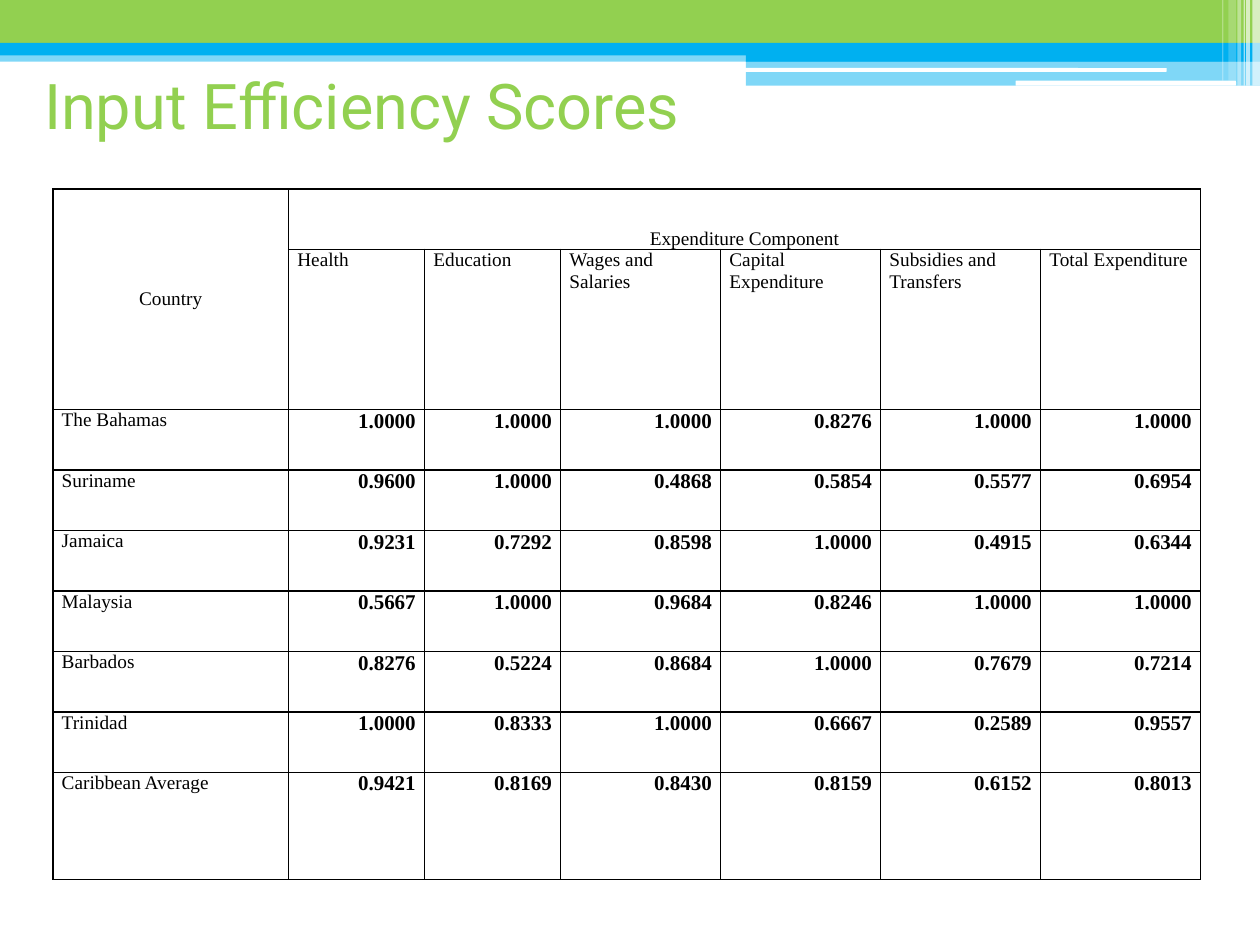
from typing import NamedTuple

from lxml.etree import SubElement
from pptx import Presentation
from pptx.dml.color import RGBColor
from pptx.enum.shapes import MSO_SHAPE
from pptx.enum.text import MSO_ANCHOR, PP_ALIGN
from pptx.oxml.ns import qn
from pptx.util import Inches, Pt

COLORS = {"green": "92D050", "blue": "00B0F0", "white": "FFFFFF", "black": "000000"}


class Bar(NamedTuple):
    left: float
    top: float
    width: float
    height: float
    color: str
    opacity: int = 100
    rounded: bool = False


class Score(NamedTuple):
    country: str
    values: tuple[str, ...]


BARS = [
    Bar(0, 0.4, 10, 0.09, "blue", 50),
    Bar(0, 0, 10, 0.34, "green"),
    Bar(0, 0.34, 10, 0.1, "blue"),
    Bar(5.92, 0.39, 4.08, 0.1, "blue"),
    Bar(5.92, 0.48, 4.08, 0.2, "blue", 50),
    Bar(5.91, 0.54, 3.35, 0.03, "white", rounded=True),
    Bar(8.06, 0.64, 1.75, 0.04, "white", rounded=True),
    Bar(9.94, 0, 0.06, 0.68, "white", 65),
    Bar(9.89, 0, 0.03, 0.68, "white", 65),
    Bar(9.87, 0, 0.01, 0.68, "white", 60),
    Bar(9.82, 0, 0.03, 0.68, "white", 40),
    Bar(9.75, 0, 0.06, 0.64, "white", 20),
    Bar(9.7, 0, 0.01, 0.64, "white", 30),
]
COMPONENTS = ["Health", "Education", "Wages and Salaries", "Capital\nExpenditure",
              "Subsidies and Transfers", "Total Expenditure"]
SCORES = [
    Score("The Bahamas", ("1.0000", "1.0000", "1.0000", "0.8276", "1.0000", "1.0000")),
    Score("Suriname", ("0.9600", "1.0000", "0.4868", "0.5854", "0.5577", "0.6954")),
    Score("Jamaica", ("0.9231", "0.7292", "0.8598", "1.0000", "0.4915", "0.6344")),
    Score("Malaysia", ("0.5667", "1.0000", "0.9684", "0.8246", "1.0000", "1.0000")),
    Score("Barbados", ("0.8276", "0.5224", "0.8684", "1.0000", "0.7679", "0.7214")),
    Score("Trinidad", ("1.0000", "0.8333", "1.0000", "0.6667", "0.2589", "0.9557")),
    Score("Caribbean Average", ("0.9421", "0.8169", "0.8430", "0.8159", "0.6152", "0.8013")),
]
COLUMN_WIDTHS = [1.87] + [1.08] * 2 + [1.27] * 4
ROW_HEIGHTS = [0.48, 1.27] + [0.48] * 6 + [0.85]


def write_text(frame, text: str, *, size: float = 11, font: str = "Times New Roman",
               color: str = "black", bold: bool = False, align=PP_ALIGN.LEFT) -> None:
    frame.text = text
    for paragraph in frame.paragraphs:
        paragraph.alignment = align
        for run in paragraph.runs:
            run.font.size = Pt(size)
            run.font.name = font
            run.font.bold = bold
            run.font.color.rgb = RGBColor.from_string(COLORS[color])


def draw_bar(slide, bar: Bar) -> None:
    kind = MSO_SHAPE.ROUNDED_RECTANGLE if bar.rounded else MSO_SHAPE.RECTANGLE
    shape = slide.shapes.add_shape(kind, Inches(bar.left), Inches(bar.top),
                                   Inches(bar.width), Inches(bar.height))
    shape.shadow.inherit = False
    shape.line.fill.background()
    shape.fill.solid()
    shape.fill.fore_color.rgb = RGBColor.from_string(COLORS[bar.color])
    if bar.opacity < 100:
        color = shape.fill._xPr.find(".//" + qn("a:srgbClr"))
        SubElement(color, qn("a:alpha")).set("val", str(bar.opacity * 1000))


def format_cell(cell) -> None:
    cell.margin_left = cell.margin_right = Inches(0.07)
    cell.margin_top = cell.margin_bottom = 0
    properties = cell._tc.get_or_add_tcPr()
    for side in ("lnL", "lnR", "lnT", "lnB"):
        line = SubElement(properties, qn(f"a:{side}"), w=str(Pt(1)))
        fill = SubElement(line, qn("a:solidFill"))
        SubElement(fill, qn("a:srgbClr"), val=COLORS["black"])
    cell.fill.background()


def draw_table(slide) -> None:
    table = slide.shapes.add_table(
        len(ROW_HEIGHTS), len(COLUMN_WIDTHS), Inches(0.42), Inches(1.5),
        Inches(sum(COLUMN_WIDTHS)), Inches(sum(ROW_HEIGHTS))).table
    table.first_row = table.horz_banding = False
    for column, width in zip(table.columns, COLUMN_WIDTHS):
        column.width = Inches(width)
    for row, height in zip(table.rows, ROW_HEIGHTS):
        row.height = Inches(height)
    for cell in table.iter_cells():
        format_cell(cell)

    country, component = table.cell(0, 0), table.cell(0, 1)
    country.merge(table.cell(1, 0))
    component.merge(table.cell(0, len(COMPONENTS)))
    country.vertical_anchor = MSO_ANCHOR.MIDDLE
    component.vertical_anchor = MSO_ANCHOR.BOTTOM
    write_text(country.text_frame, "Country", align=PP_ALIGN.CENTER)
    write_text(component.text_frame, "Expenditure Component", align=PP_ALIGN.CENTER)
    for column, name in enumerate(COMPONENTS, start=1):
        write_text(table.cell(1, column).text_frame, name)
    for row, score in enumerate(SCORES, start=2):
        write_text(table.cell(row, 0).text_frame, score.country)
        for column, value in enumerate(score.values, start=1):
            write_text(table.cell(row, column).text_frame, value,
                       size=12, bold=True, align=PP_ALIGN.RIGHT)


def main() -> None:
    presentation = Presentation()
    presentation.slide_width = Inches(10)
    presentation.slide_height = Inches(7.5)
    slide = presentation.slides.add_slide(presentation.slide_layouts[5])
    for bar in BARS:
        draw_bar(slide, bar)
    title = slide.shapes.title
    title.left, title.top = Inches(0.25), Inches(0.58)
    title.width, title.height = Inches(9), Inches(0.5)
    title.text_frame.vertical_anchor = MSO_ANCHOR.MIDDLE
    write_text(title.text_frame, "Input Efficiency Scores", size=36, font="Roboto", color="green")
    draw_table(slide)
    presentation.save("out.pptx")


if __name__ == "__main__":
    main()
